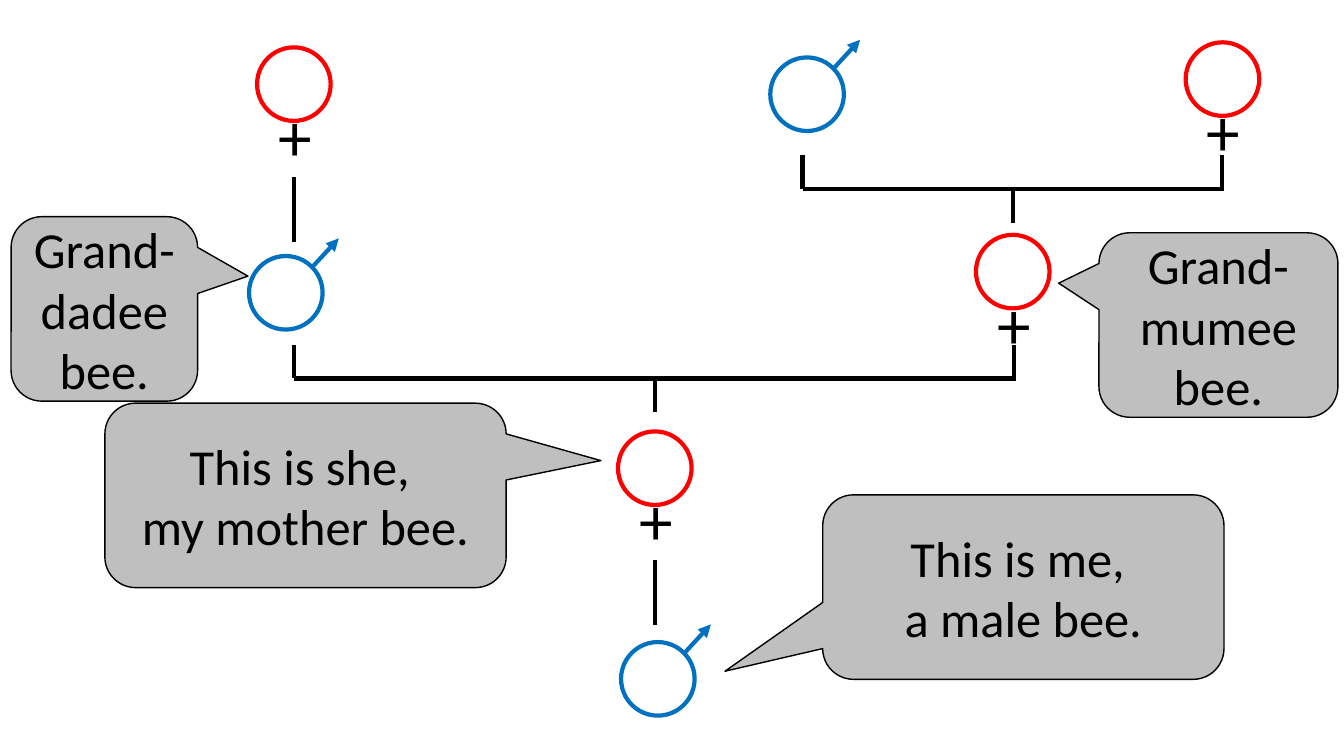
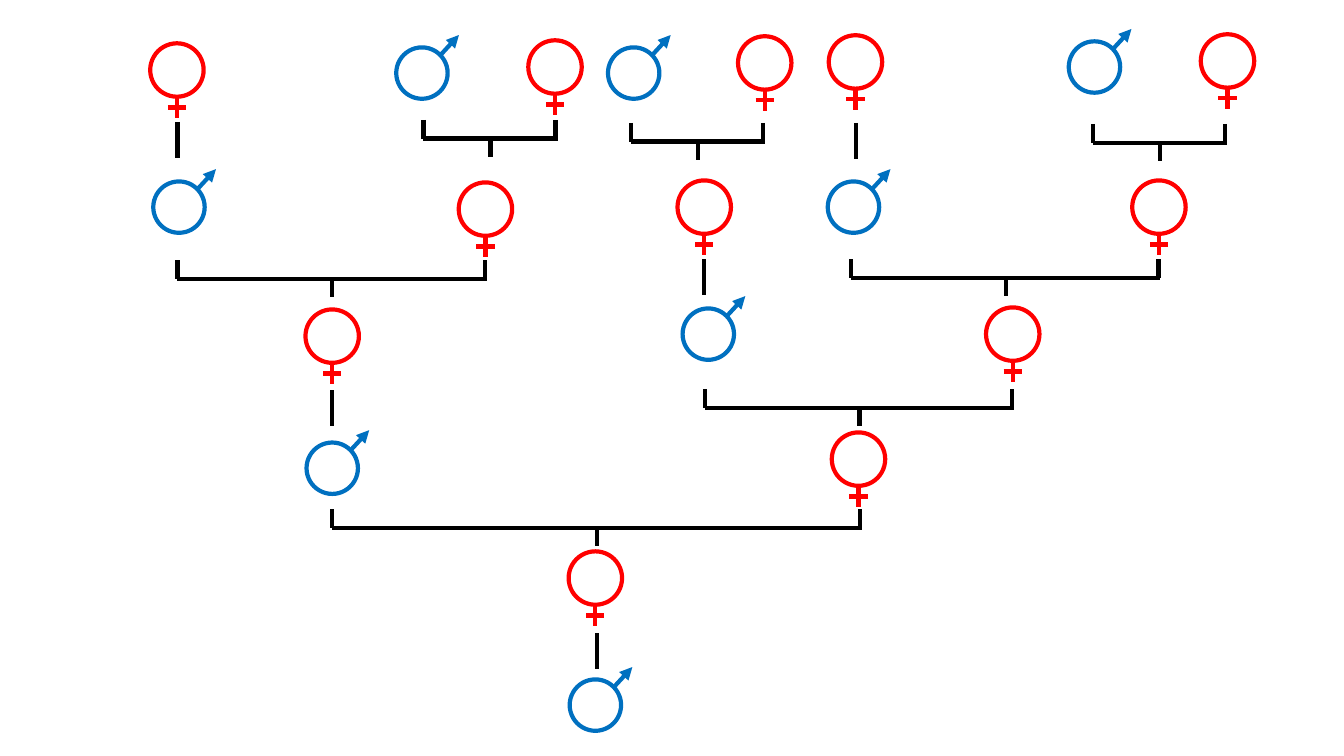
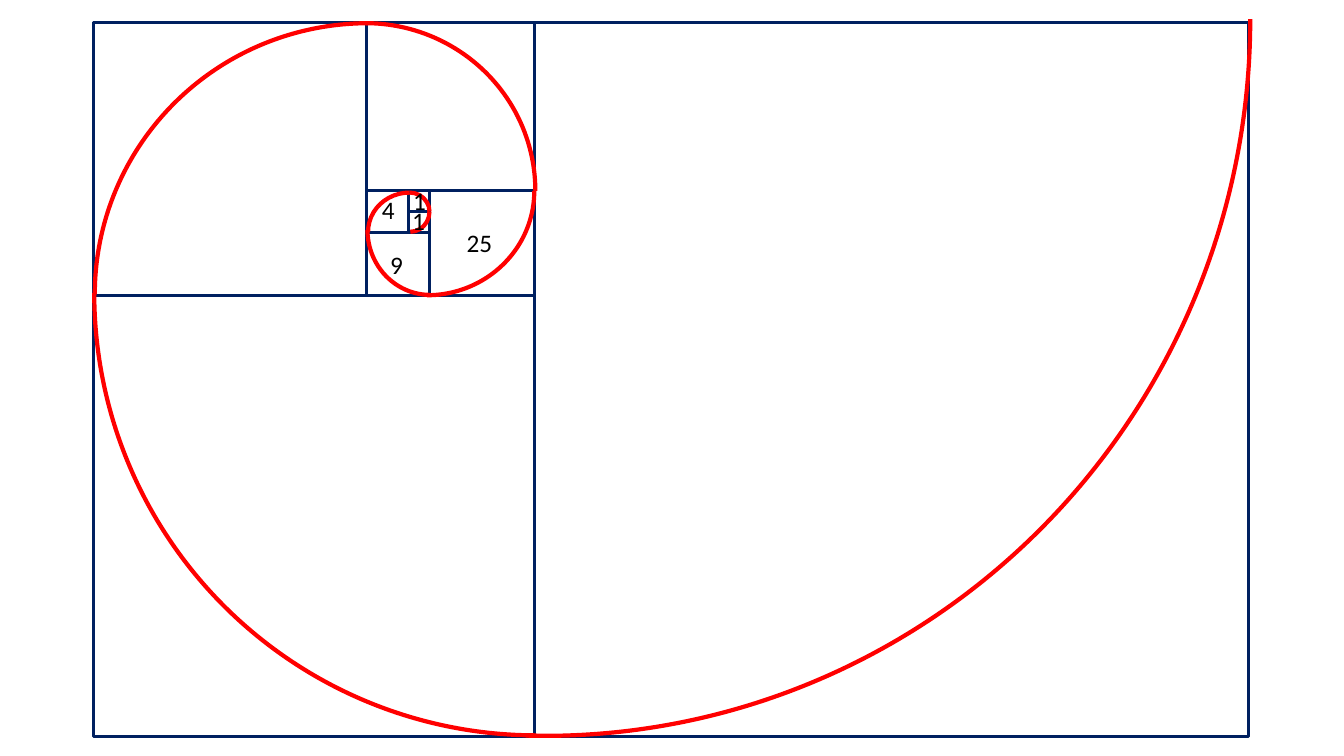
import pptx
import pptx.dml.color
import pptx.enum.shapes
import pptx.enum.text
import pptx.oxml
import pptx.oxml.ns
import pptx.util

Inches = pptx.util.Inches
SHAPE = pptx.enum.shapes.MSO_SHAPE
STRAIGHT = pptx.enum.shapes.MSO_CONNECTOR.STRAIGHT
ALIGN = pptx.enum.text.PP_ALIGN

FONT = "Calibri"
BLACK, WHITE, GREY = "000000", "FFFFFF", "BFBFBF"
FEMALE_RED, MALE_BLUE, NAVY = "FF0000", "0070C0", "002060"
THICK = 3
BAR_OVERHANG = 0.02


def color(hex_string):
    return pptx.dml.color.RGBColor.from_string(hex_string)


def add_line(shapes, start, end, hex_string, arrow=False):
    connector = shapes.add_connector(STRAIGHT, *(Inches(value) for value in start + end))
    connector.line.color.rgb = color(hex_string)
    connector.line.width = pptx.util.Pt(THICK)
    properties = connector._element.spPr
    if arrow:
        tail = pptx.oxml.parse_xml(f'<a:tailEnd {pptx.oxml.ns.nsdecls("a")} type="triangle"/>')
        connector.line._get_or_add_ln().append(tail)
    properties.append(pptx.oxml.parse_xml(f'<a:effectLst {pptx.oxml.ns.nsdecls("a")}/>'))


def add_outline(shapes, kind, box, hex_string, width=THICK, fill=None):
    shape = shapes.add_shape(kind, *(Inches(value) for value in box))
    shape.shadow.inherit = False
    if fill:
        shape.fill.solid()
        shape.fill.fore_color.rgb = color(fill)
    else:
        shape.fill.background()
    shape.line.color.rgb = color(hex_string)
    shape.line.width = pptx.util.Pt(width)
    return shape


def write_lines(frame, lines, size, alignment):
    frame.word_wrap = True
    for index, text in enumerate(lines):
        paragraph = frame.paragraphs[0] if index == 0 else frame.add_paragraph()
        paragraph.alignment = alignment
        run = paragraph.add_run()
        run.text = text
        run.font.name = FONT
        run.font.size = pptx.util.Pt(size)
        run.font.color.rgb = color(BLACK)


def add_label(shapes, box, text, size, alignment):
    label = shapes.add_textbox(*(Inches(value) for value in box))
    label.text_frame.margin_right = 0
    if alignment == ALIGN.CENTER:
        label.text_frame.margin_left = 0
    write_lines(label.text_frame, [text], size, alignment)


def add_male(slide, left, top, size):
    shapes = slide.shapes.add_group_shape().shapes
    add_outline(shapes, SHAPE.OVAL, (left, top, size, size), MALE_BLUE)
    start = (left + 0.86 * size, top + 0.15 * size)
    end = (left + 1.22 * size, top - 0.24 * size)
    add_line(shapes, start, end, MALE_BLUE, arrow=True)


def add_female(slide, left, top, size, text_cross=False):
    shapes = slide.shapes.add_group_shape().shapes
    add_outline(shapes, SHAPE.OVAL, (left, top, size, size), FEMALE_RED)
    if text_cross:
        add_label(shapes, (left + 0.12, top + 0.42, 0.51, 0.91), "+", 48, ALIGN.CENTER)
        return
    center, bottom = left + size / 2, top + size
    add_line(shapes, (center, bottom), (center, bottom + 0.4 * size), FEMALE_RED)
    bar = bottom + 0.2 * size
    add_line(shapes, (center - 0.09, bar), (center + 0.09, bar), FEMALE_RED)


def add_fork(slide, left, top, width, height):
    shapes = slide.shapes.add_group_shape().shapes
    right, bar = left + width, top + height / 2
    center, right_leg = left + width / 2, right - BAR_OVERHANG
    for start, end in (
        ((left, bar), (right, bar)),
        ((left, top), (left, bar)),
        ((right_leg, top), (right_leg, bar)),
        ((center, bar), (center, top + height)),
    ):
        add_line(shapes, start, end, BLACK)


def add_descent(slide, left, top, height):
    add_line(slide.shapes, (left, top), (left, top + height), BLACK)


def add_callout(slide, box, tip, lines):
    left, top, width, height = box
    callout = add_outline(slide.shapes, SHAPE.ROUNDED_RECTANGULAR_CALLOUT, box, BLACK, 1, GREY)
    callout.adjustments[0] = (tip[0] - left) / width - 0.5
    callout.adjustments[1] = (tip[1] - top) / height - 0.5
    callout.text_frame.vertical_anchor = pptx.enum.text.MSO_ANCHOR.MIDDLE
    write_lines(callout.text_frame, lines, 36, ALIGN.CENTER)


def build_family_slide(slide):
    size = 0.73
    for left, top in ((6.16, 6.37), (2.47, 2.54), (7.64, 0.57)):
        add_male(slide, left, top, size)
    for left, top in ((9.68, 2.33), (6.13, 4.28), (2.55, 0.47), (11.76, 0.42)):
        add_female(slide, left, top, size, text_cross=True)
    for left, top, width in ((2.92, 3.42, 7.16), (7.96, 1.54, 4.18)):
        add_fork(slide, left, top, width, 0.67)
    for left, top in ((6.5, 5.56), (2.92, 1.76)):
        add_descent(slide, left, top, 0.64)
    for box, tip, lines in (
        ((8.16, 4.91, 3.98, 1.83), (7.19, 6.66), ("This is me, ", "a male bee.")),
        ((1.04, 4, 3.98, 1.83), (5.96, 4.57), ("This is she, ", "my mother bee.")),
        ((10.9, 2.31, 2.37, 1.83), (10.5, 2.81), ("Grand-mumee", "bee.")),
        ((0.11, 2.15, 1.85, 1.83), (2.46, 2.74), ("Grand-dadee", "bee.")),
    ):
        add_callout(slide, box, tip, lines)


def build_ancestors_slide(slide):
    for left, top, width in (
        (3.29, 5.05, 5.26),
        (6.99, 3.86, 3.07), (1.76, 2.58, 3.07), (8.44, 2.57, 3.07),
        (6.26, 1.22, 1.33), (10.84, 1.23, 1.33), (4.2, 1.19, 1.33),
    ):
        add_fork(slide, left, top, width, 0.37)
    for left, top in ((5.92, 6.28), (3.29, 3.87), (6.98, 2.57), (1.76, 1.21), (8.49, 1.22)):
        add_descent(slide, left, top, 0.36)
    for left, top in (
        (5.65, 6.74), (3.04, 4.39), (6.77, 3.06), (8.21, 1.8),
        (1.52, 1.8), (3.93, 0.47), (6.03, 0.47), (10.6, 0.41),
    ):
        add_male(slide, left, top, 0.51)
    for left, top in (
        (5.64, 5.47), (8.25, 4.29), (9.78, 3.05), (3.03, 3.07),
        (11.23, 1.79), (4.55, 1.81), (6.72, 1.79), (1.49, 0.43),
        (5.24, 0.4), (7.32, 0.36), (8.22, 0.35), (11.91, 0.34),
    ):
        add_female(slide, left, top, 0.53)


def fibonacci_squares(left, top, unit, count):
    squares = [(left, top, unit, unit)]
    right, bottom = left + unit, top + unit
    previous, size = 0, unit
    for index in range(1, count):
        previous, size = size, previous + size
        side = index % 4
        if side == 0:
            squares.append((right, top, size, size))
            right += size
        elif side == 1:
            top -= size
            squares.append((left, top, size, size))
        elif side == 2:
            left -= size
            squares.append((left, top, size, size))
        else:
            squares.append((left, bottom, size, size))
            bottom += size
    return squares


def add_quarter_arc(slide, box, turn):
    arc = add_outline(slide.shapes, SHAPE.ARC, box, FEMALE_RED)
    arc._element.spPr.xfrm.set("flipV", "1")
    arc.rotation = -90 * turn % 360
    return arc


def build_spiral_slide(slide):
    for index, box in enumerate(fibonacci_squares(4.05, 2.1, 7.08 / 34, 9)):
        outline = NAVY if index else FEMALE_RED
        add_outline(slide.shapes, SHAPE.RECTANGLE, box, outline, 2.25, WHITE)
    arc_boxes = (
        (3.88, 1.9, 0.38, 0.4), (3.87, 1.9, 0.38, 0.4), (3.65, 1.91, 0.82, 0.78),
        (3.62, 1.66, 1.29, 1.24), (3.17, 0.86, 2.13, 2.07), (1.96, 0.21, 3.33, 3.37),
        (0.94, 0.23, 5.42, 5.38), (0.93, -1.48, 8.78, 8.77), (-1.59, -6.92, 13.99, 14.22),
    )
    for index, box in enumerate(arc_boxes):
        arc = add_quarter_arc(slide, box, index % 4)
    arc.adjustments[0] = 161.07
    for left, top, width, area in (
        (3.99, 1.99, 0.35, "1"), (4, 1.79, 0.35, "1"), (3.69, 1.88, 0.35, "4"),
        (3.77, 2.42, 0.35, "9"), (4.53, 2.21, 0.5, "25"),
    ):
        add_label(slide.shapes, (left, top, width, 0.4), area, 18, ALIGN.LEFT)


def main():
    presentation = pptx.Presentation()
    presentation.slide_width = Inches(13.33)
    presentation.slide_height = Inches(7.5)
    blank_layout = presentation.slide_layouts[6]
    for build in (build_family_slide, build_ancestors_slide, build_spiral_slide):
        build(presentation.slides.add_slide(blank_layout))
    presentation.save("out.pptx")


if __name__ == "__main__":
    main()
